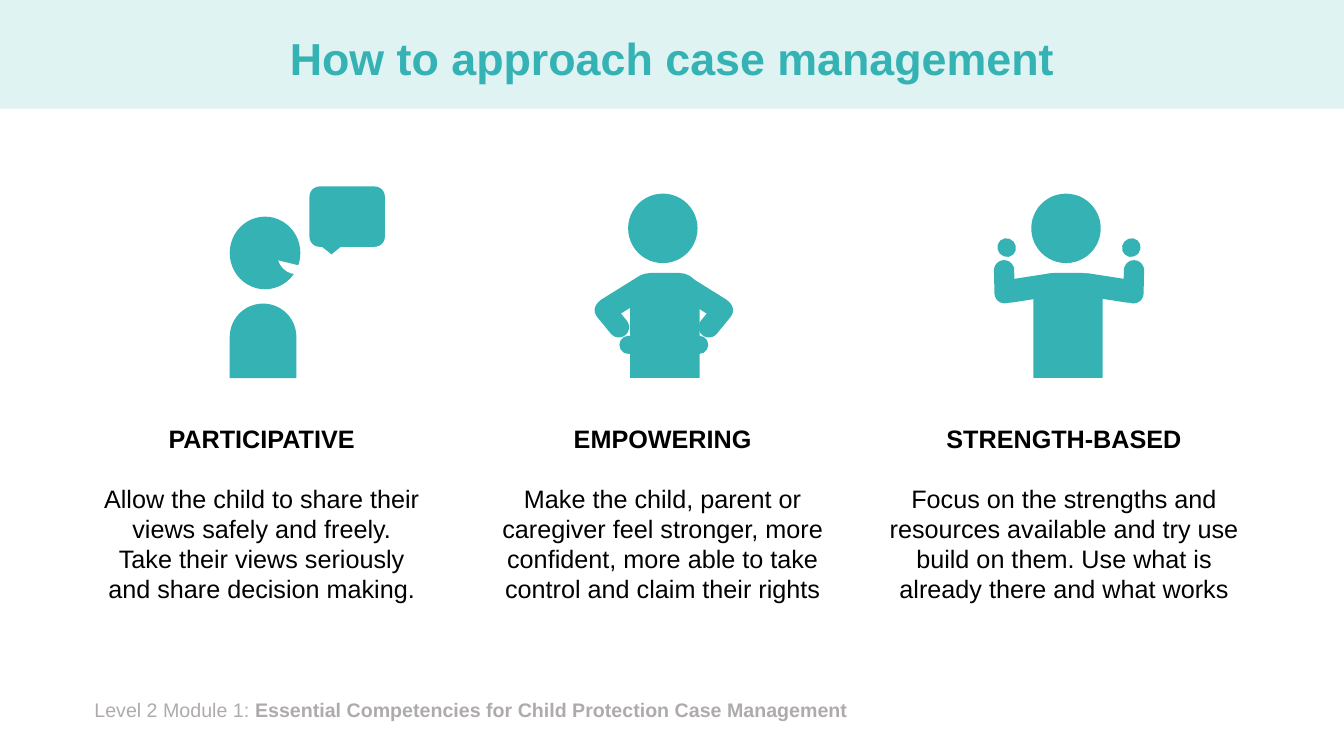
from pptx import Presentation, util as u
from pptx.dml.color import RGBColor
from pptx.enum import shapes, text

TEAL = RGBColor(0x35, 0xB2, 0xB4)
PALE_TEAL = RGBColor(0xDE, 0xF3, 0xF2)
GREY = RGBColor(0xAF, 0xAB, 0xAB)
BLACK = RGBColor(0, 0, 0)
WHITE = RGBColor(0xFF, 0xFF, 0xFF)
KIND = shapes.MSO_SHAPE


def add_part(parent, kind, left, top, width, height, color=TEAL, adjust=(), turn=0):
    part = parent.shapes.add_shape(kind, u.Cm(left), u.Cm(top), u.Cm(width), u.Cm(height))
    part.shadow.inherit = False
    part.fill.solid()
    part.fill.fore_color.rgb = color
    part.line.fill.background()
    for i, value in enumerate(adjust):
        part.adjustments[i] = value
    part.rotation = turn
    return part


def add_run(paragraph, wording, size, color, bold=False):
    run = paragraph.add_run()
    run.text = wording
    run.font.name = "Arial"
    run.font.size = u.Pt(size)
    run.font.bold = bold
    run.font.color.rgb = color


deck = Presentation()
deck.slide_width, deck.slide_height = u.Cm(33.87), u.Cm(19.05)
slide = deck.slides.add_slide(deck.slide_layouts[6])

add_part(slide, KIND.RECTANGLE, 0, 0, 33.87, 2.74, PALE_TEAL)

footer = slide.shapes.add_textbox(u.Cm(2.13), u.Cm(17.45), u.Cm(26.82), u.Cm(0.86)).text_frame
footer.word_wrap = True
add_run(footer.paragraphs[0], "Level 2 Module 1: ", 14, GREY)
add_run(footer.paragraphs[0], "Essential Competencies for Child Protection Case Management", 14, GREY, True)

title = slide.shapes.add_textbox(u.Cm(2.34), u.Cm(0.33), u.Cm(29.21), u.Cm(2.41)).text_frame
title.word_wrap = True
title.vertical_anchor = text.MSO_ANCHOR.MIDDLE
title.paragraphs[0].alignment = text.PP_ALIGN.CENTER
title.paragraphs[0].line_spacing = 0.9
add_run(title.paragraphs[0], "How to approach case management", 32, TEAL, True)

approaches = [
    (2.34, 8.51, "PARTICIPATIVE",
     "Allow the child to share their views safely and freely. "
     "Take their views seriously and share decision making."),
    (12.19, 9.02, "EMPOWERING",
     "Make the child, parent or caregiver feel stronger, more confident, "
     "more able to take control and claim their rights"),
    (22.05, 9.53, "STRENGTH-BASED",
     "Focus on the strengths and resources available and try use build on them. "
     "Use what is already there and what works"),
]
for left, width, approach, advice in approaches:
    column = slide.shapes.add_textbox(u.Cm(left), u.Cm(10.54), u.Cm(width), u.Cm(4.88)).text_frame
    column.word_wrap = True
    heading = column.paragraphs[0]
    heading.space_after = u.Pt(21)
    add_run(heading, approach, 18, BLACK, True)
    explanation = column.add_paragraph()
    add_run(explanation, advice, 18, BLACK)
    for paragraph in (heading, explanation):
        paragraph.alignment = text.PP_ALIGN.CENTER

speaker = slide.shapes.add_group_shape()
add_part(speaker, KIND.OVAL, 5.79, 5.46, 1.78, 1.83)
add_part(speaker, KIND.ROUND_2_SAME_RECTANGLE, 5.79, 7.65, 1.68, 1.88, adjust=(0.5, 0))
add_part(speaker, KIND.CHORD, 6.99, 5.92, 0.97, 0.99, WHITE, (27, 97.34))
add_part(speaker, KIND.ROUNDED_RECTANGULAR_CALLOUT, 7.8, 4.7, 1.9, 1.52)

hands_on_hips = [
    (0.95, 7.49, 0.56, 1.68, 301.9),
    (1.31, 8.03, 0.52, 1.07, 219.3),
    (0.89, 8.69, 0.46, 0.46, 0),
]
raised_fists = [
    (0.99, 7.26, 0.58, 1.64, 98.8),
    (1.63, 7.1, 0.51, 1.09, 181.3),
    (1.57, 6.24, 0.46, 0.48, 40.6),
]
for body_left, arm_axis, pose in ((15.88, 16.73, hands_on_hips), (26.04, 26.94, raised_fists)):
    figure = slide.shapes.add_group_shape()
    add_part(figure, KIND.ROUND_2_SAME_RECTANGLE, body_left, 6.88, 1.75, 2.64, adjust=(0.29, 0))
    add_part(figure, KIND.OVAL, body_left - 0.05, 4.88, 1.75, 1.75)
    *arm, hand = pose
    for side in (1, -1):
        for reach, middle, width, height, turn in arm:
            add_part(figure, KIND.ROUND_2_SAME_RECTANGLE, arm_axis + side * reach - width / 2,
                     middle - height / 2, width, height, adjust=(0.5, 0.5), turn=side * turn)
        reach, middle, width, height, turn = hand
        add_part(figure, KIND.OVAL, arm_axis + side * reach - width / 2,
                 middle - height / 2, width, height, turn=side * turn)

deck.save("out.pptx")
